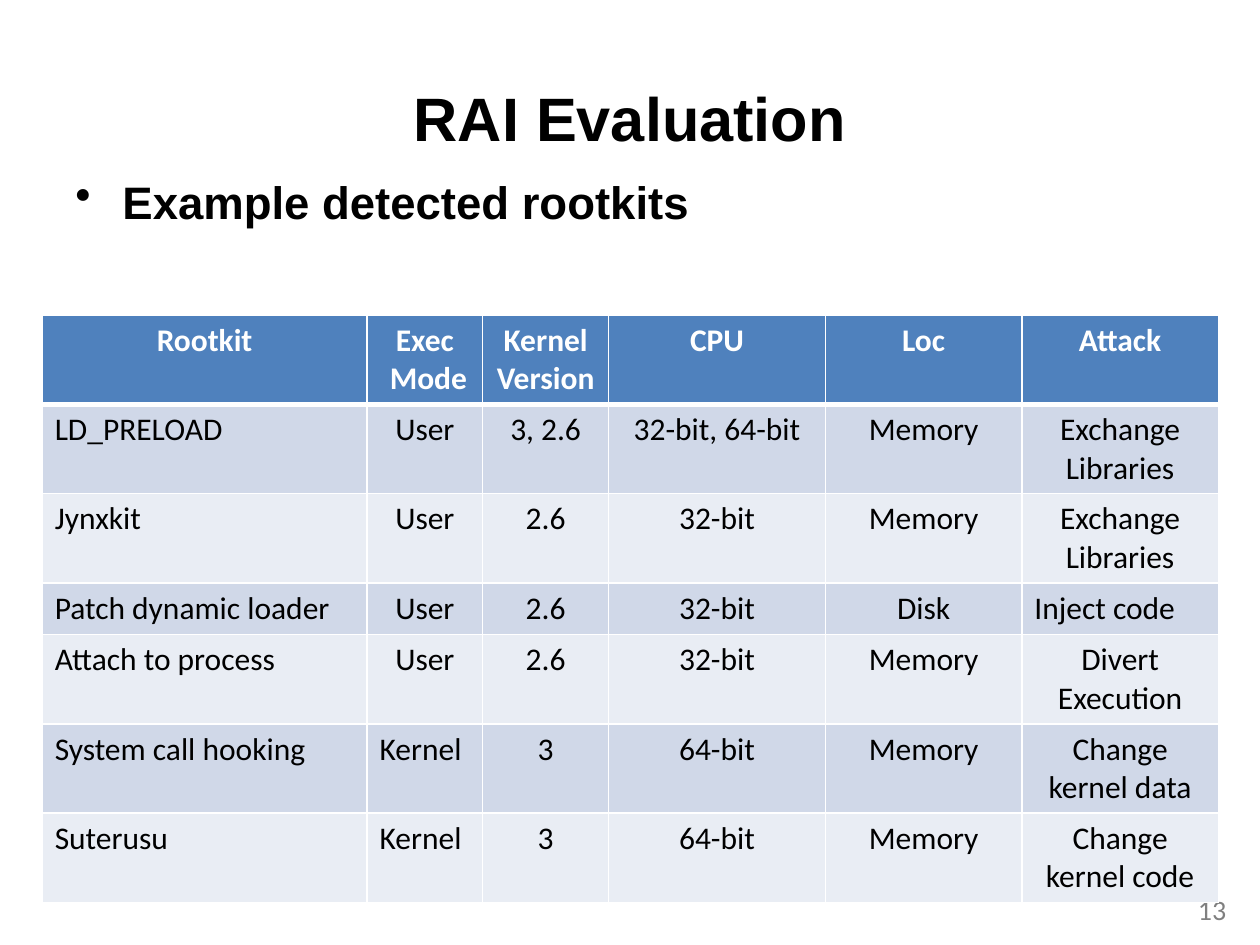
from lxml import etree
from pptx import Presentation
from pptx.dml.color import RGBColor
from pptx.enum.text import MSO_ANCHOR, PP_ALIGN
from pptx.oxml.ns import qn
from pptx.util import Cm, Pt

LEFT, CENTER, RIGHT = PP_ALIGN.LEFT, PP_ALIGN.CENTER, PP_ALIGN.RIGHT
TOP, MIDDLE = MSO_ANCHOR.TOP, MSO_ANCHOR.MIDDLE

BLACK, WHITE, GREY = "000000", "FFFFFF", "808080"
HEADER_FILL, BAND_FILLS = "4F81BD", ("D0D8E8", "E9EDF4")

COLUMN_WIDTHS = (6.55, 2.33, 2.54, 4.37, 3.96, 3.96)
TALL_ROW, SHORT_ROW = 1.8, 1.04
HEADER = ("Rootkit", "Exec\n Mode", "Kernel Version", "CPU", "Loc", "Attack")
ROOTKITS = (
    ("LD_PRELOAD", "User", "3, 2.6", "32-bit, 64-bit", "Memory", "Exchange Libraries"),
    ("Jynxkit", "User", "2.6", "32-bit", "Memory", "Exchange Libraries"),
    ("Patch dynamic loader", "User", "2.6", "32-bit", "Disk", "Inject code"),
    ("Attach to process", "User", "2.6", "32-bit", "Memory", "Divert Execution"),
    ("System call hooking", "Kernel", "3", "64-bit", "Memory", "Change kernel data"),
    ("Suterusu", "Kernel", "3", "64-bit", "Memory", "Change kernel code"),
)
LEFT_ALIGNED = {"Kernel", "Inject code"}


def rgb(value):
    return RGBColor.from_string(value)


class SlideBuilder:
    heading_font = "Arial"
    table_font = "Calibri"
    table_size = 18

    def __init__(self, slide):
        self.slide = slide

    def style(self, paragraph, font, size, color, bold, align):
        paragraph.alignment = align
        paragraph.font.name = font
        paragraph.font.size = Pt(size)
        paragraph.font.bold = bold
        paragraph.font.color.rgb = rgb(color)

    def text(self, text, box, size, font=heading_font, color=BLACK, bold=True,
             align=LEFT, anchor=TOP):
        shape = self.slide.shapes.add_textbox(*map(Cm, box))
        frame = shape.text_frame
        frame.word_wrap = True
        frame.vertical_anchor = anchor
        frame.text = text
        paragraph = frame.paragraphs[0]
        self.style(paragraph, font, size, color, bold, align)
        return paragraph

    def bullet(self, text, box, size):
        paragraph = self.text(text, box, size)
        paragraph.space_before = Pt(size * 0.2)
        properties = paragraph.font._element.getparent()
        properties.set("marL", str(Cm(0.95)))
        properties.set("indent", str(-Cm(0.95)))
        bullet = etree.Element(qn("a:buChar"), char="•")
        properties.insert(properties.index(paragraph.font._element), bullet)

    def borders(self, cell, bottom):
        """Draw white cell edges, with a bottom edge of the given points."""
        properties = cell._tc.get_or_add_tcPr()
        edges = (("a:lnL", 1), ("a:lnR", 1), ("a:lnT", 1), ("a:lnB", bottom))
        for position, (tag, width) in enumerate(edges):
            line = etree.Element(qn(tag), w=str(Pt(width)))
            fill = etree.SubElement(line, qn("a:solidFill"))
            etree.SubElement(fill, qn("a:srgbClr"), val=WHITE)
            properties.insert(position, line)

    def cell(self, cell, text, fill, color, bold, align, bottom):
        cell.text = text
        cell.fill.solid()
        cell.fill.fore_color.rgb = rgb(fill)
        for paragraph in cell.text_frame.paragraphs:
            self.style(paragraph, self.table_font, self.table_size, color, bold, align)
        self.borders(cell, bottom)

    def table(self, left, top, header, rows, widths):
        heights = [SHORT_ROW if "Inject code" in row else TALL_ROW
                   for row in (header, *rows)]
        table = self.slide.shapes.add_table(
            len(heights), len(widths), Cm(left), Cm(top),
            Cm(sum(widths)), Cm(sum(heights))).table
        for column, width in zip(table.columns, widths):
            column.width = Cm(width)
        for row, height in zip(table.rows, heights):
            row.height = Cm(height)
        for column, text in enumerate(header):
            self.cell(table.cell(0, column), text, HEADER_FILL, WHITE, True, CENTER, 3)
        for number, row in enumerate(rows):
            for column, text in enumerate(row):
                align = LEFT if column == 0 or text in LEFT_ALIGNED else CENTER
                self.cell(table.cell(number + 1, column), text,
                          BAND_FILLS[number % 2], BLACK, False, align, 1)


def main():
    presentation = Presentation()
    presentation.slide_width, presentation.slide_height = Cm(25.4), Cm(19.05)
    slide = presentation.slides.add_slide(presentation.slide_layouts[6])
    builder = SlideBuilder(slide)
    builder.text("RAI Evaluation", (1.27, 0.76, 22.86, 3.18), 35,
                 align=CENTER, anchor=MIDDLE)
    builder.bullet("Example detected rootkits", (1.27, 3.38, 22.86, 13.64), 26)
    builder.text("13", (19.05, 17.83, 5.92, 1.02), 16, font="Calibri", color=GREY,
                 bold=False, align=RIGHT, anchor=MIDDLE)
    builder.table(0.85, 6.35, HEADER, ROOTKITS, COLUMN_WIDTHS)
    presentation.save("out.pptx")


if __name__ == "__main__":
    main()
